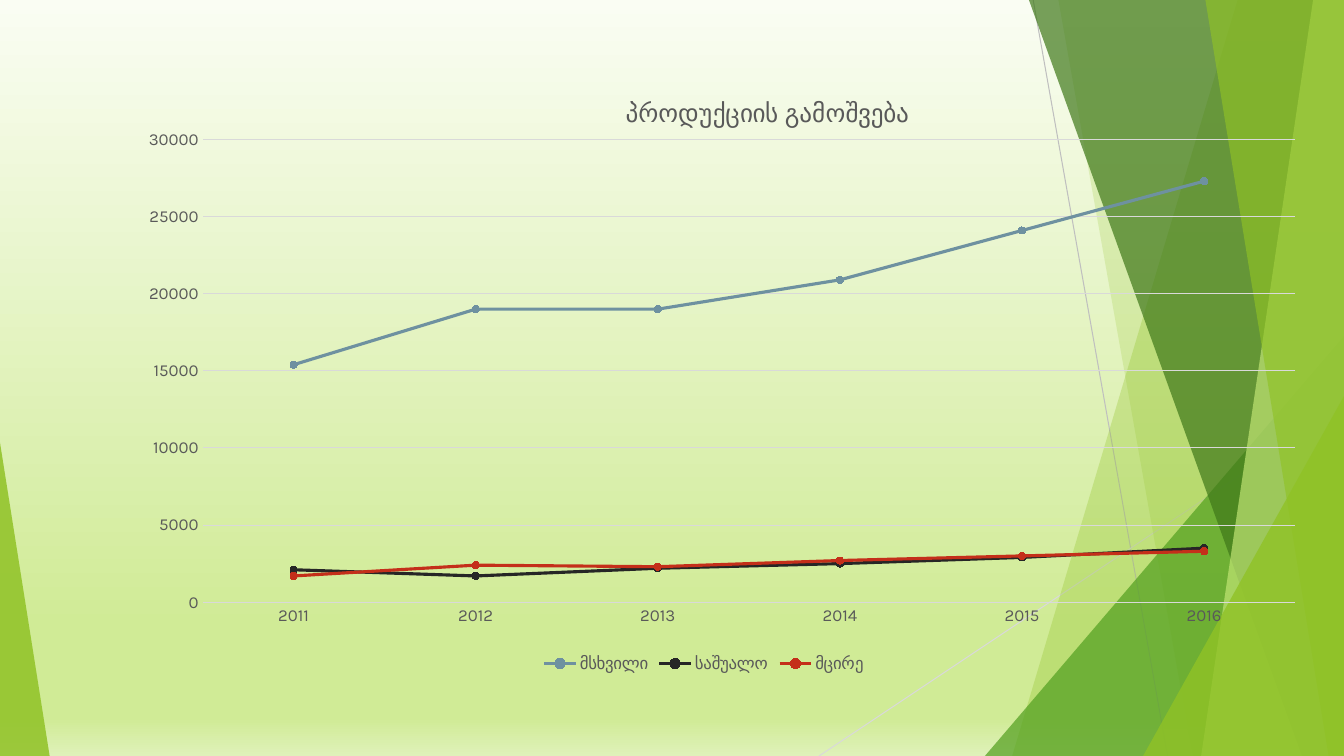
from lxml import etree
from pptx import Presentation
from pptx.chart.data import CategoryChartData
from pptx.dml.color import RGBColor
from pptx.enum import chart as ch, shapes
from pptx.oxml.ns import qn
from pptx.util import Pt

W, H = 960, 540
FONT = "Karla"
GREEN = RGBColor(0x90, 0xC2, 0x26)
LEAF = RGBColor(0x54, 0xA0, 0x21)
FOREST = RGBColor(0x3F, 0x78, 0x19)
LIME = RGBColor(0xC0, 0xE4, 0x74)
GREY = RGBColor(0xBF, 0xBF, 0xBF)
PALE_GREY = RGBColor(0xD9, 0xD9, 0xD9)
TEXT = RGBColor(0x59, 0x59, 0x59)
STEEL = RGBColor(0x6E, 0x91, 0xA0)
BLACK = RGBColor(0x26, 0x26, 0x26)
RED = RGBColor(0xC4, 0x2F, 0x1A)
SKY = [(0, RGBColor(0xFA, 0xFD, 0xF3)), (83, RGBColor(0xD0, 0xEB, 0x96)),
       (95, RGBColor(0xD0, 0xEB, 0x96)), (100, RGBColor(0xDF, 0xF1, 0xB9))]

YEARS = ["2011", "2012", "2013", "2014", "2015", "2016"]
OUTPUT = [("მსხვილი", STEEL, (15400, 19000, 19000, 20900, 24100, 27300)),
          ("საშუალო", BLACK, (2100, 1700, 2200, 2500, 2900, 3500)),
          ("მცირე", RED, (1700, 2400, 2300, 2700, 3000, 3300))]


def add_background(s):
    fill = s.background.fill
    fill.gradient()
    fill.gradient_angle = 270
    stops = next(s._element.iter(qn("a:gsLst")))
    for gs in list(stops):
        stops.remove(gs)
    for pos, color in SKY:
        gs = etree.SubElement(stops, qn("a:gs"), pos=str(pos * 1000))
        etree.SubElement(gs, qn("a:srgbClr"), val=str(color))


def paint(sp, color, opacity):
    sp.shadow.inherit = False
    sp.line.fill.background()
    sp.fill.solid()
    sp.fill.fore_color.rgb = color
    clr = sp._element.spPr.find(qn("a:solidFill"))[0]
    etree.SubElement(clr, qn("a:alpha"), val=str(opacity * 1000))


def add_hairline(s, x1, y1, x2, y2, color):
    line = s.shapes.add_connector(shapes.MSO_CONNECTOR.STRAIGHT,
                                  Pt(x1), Pt(y1), Pt(x2), Pt(y2))
    line.line.color.rgb = color
    line.line.width = Pt(0.75)
    etree.SubElement(line._element.spPr, qn("a:effectLst"))


def add_ribbon(s, top, bottom, color, opacity):
    """Full-height band from a slanted left edge to the right slide edge."""
    fb = s.shapes.build_freeform(Pt(top), 0)
    fb.add_line_segments([(Pt(W), 0), (Pt(W), Pt(H)), (Pt(bottom), Pt(H))])
    paint(fb.convert_to_shape(), color, opacity)


def add_corner(s, x, w, h, apex, color, opacity):
    """Triangle standing on the bottom edge; apex 0 is left, 1 is right."""
    sp = s.shapes.add_shape(shapes.MSO_SHAPE.ISOSCELES_TRIANGLE,
                            Pt(x), Pt(H - h), Pt(w), Pt(h))
    sp.adjustments[0] = apex
    paint(sp, color, opacity)


def add_facets(s):
    add_hairline(s, 738, 0, 834, H, GREY)
    add_hairline(s, W, 290, 585, H, PALE_GREY)
    add_ribbon(s, 884, 723, GREEN, 30)
    add_ribbon(s, 756, 852, GREEN, 20)
    add_corner(s, 703.5, 256.5, 300, 1, LEAF, 72)
    add_ribbon(s, 735, 930, FOREST, 70)
    add_ribbon(s, 938, 858, LIME, 70)
    add_ribbon(s, 861, 949, GREEN, 65)
    add_corner(s, 816.5, 143.5, 257, 1, GREEN, 80)
    add_corner(s, 0, 35.5, 224, 0, GREEN, 85)


def set_layout(parent, index, **values):
    """Place a chart part by fractions of the chart area."""
    old = parent.find(qn("c:layout"))
    if old is not None:
        parent.remove(old)
    layout = etree.Element(qn("c:layout"))
    parent.insert(index, layout)
    manual = etree.SubElement(layout, qn("c:manualLayout"))
    for name, value in values.items():
        etree.SubElement(manual, qn("c:" + name), val=str(value))


def set_font(font, size):
    font.name = FONT
    font.size = Pt(size)
    font.bold = False
    font.color.rgb = TEXT


def add_output_chart(s, x, y, w, h):
    data = CategoryChartData()
    data.categories = YEARS
    for name, _, values in OUTPUT:
        data.add_series(name, values)
    chart = s.shapes.add_chart(ch.XL_CHART_TYPE.LINE_MARKERS,
                               Pt(x), Pt(y), Pt(w), Pt(h), data).chart
    set_font(chart.font, 12)

    tf = chart.chart_title.text_frame
    tf.text = "პროდუქციის გამოშვება"
    set_font(tf.paragraphs[0].runs[0].font, 18)
    set_layout(chart.chart_title._element, 1,
               xMode="edge", yMode="edge", x=0.43, y=0.02)
    set_layout(chart._chartSpace.chart.plotArea, 0, layoutTarget="inner",
               xMode="edge", yMode="edge", x=0.076, y=0.1, w=0.924, h=0.774)

    chart.has_legend = True
    chart.legend.position = ch.XL_LEGEND_POSITION.BOTTOM
    chart.legend.include_in_layout = False
    set_font(chart.legend.font, 12)

    for axis in (chart.category_axis, chart.value_axis):
        axis.major_tick_mark = axis.minor_tick_mark = ch.XL_TICK_MARK.NONE
        set_font(axis.tick_labels.font, 12)
    value_axis = chart.value_axis
    value_axis.minimum_scale, value_axis.maximum_scale = 0, 30000
    value_axis.major_unit = 5000
    value_axis.format.line.fill.background()
    for line in (chart.category_axis.format.line,
                 value_axis.major_gridlines.format.line):
        line.color.rgb = PALE_GREY
        line.width = Pt(0.75)

    chart.plots[0].vary_by_categories = False
    for series, (_, color, _) in zip(chart.plots[0].series, OUTPUT):
        series.smooth = False
        series.format.line.color.rgb = color
        series.format.line.width = Pt(2.25)
        marker = series.marker
        marker.style = ch.XL_MARKER_STYLE.CIRCLE
        marker.size = 5
        marker.format.fill.solid()
        marker.format.fill.fore_color.rgb = color
        marker.format.line.color.rgb = color


def main():
    prs = Presentation()
    prs.slide_width, prs.slide_height = Pt(W), Pt(H)
    s = prs.slides.add_slide(prs.slide_layouts[6])
    add_background(s)
    add_facets(s)
    add_output_chart(s, 80.5, 57, 845, 427)
    prs.save("out.pptx")


if __name__ == "__main__":
    main()
